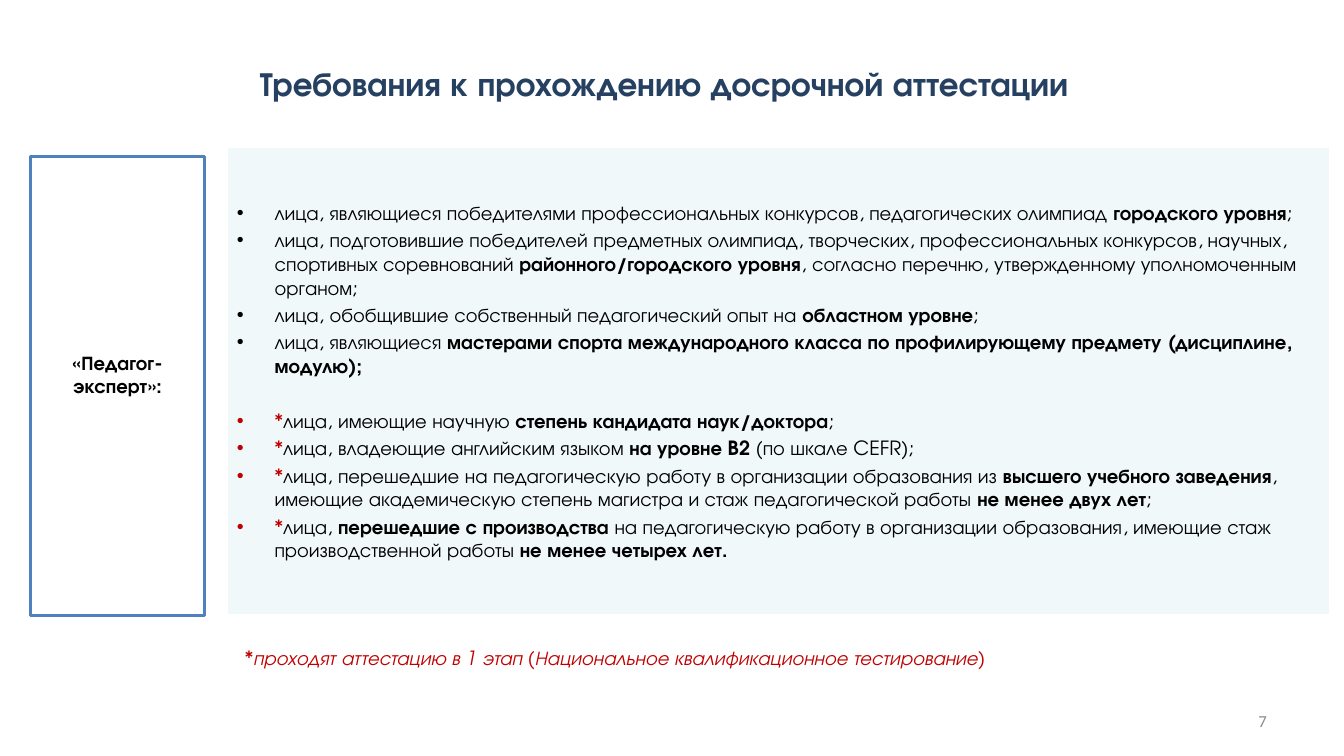
from dataclasses import dataclass

from lxml.etree import SubElement
from pptx import Presentation
from pptx.dml.color import RGBColor
from pptx.enum.shapes import MSO_SHAPE as Preset
from pptx.enum.text import MSO_ANCHOR as Anchor, PP_ALIGN as Align
from pptx.oxml.ns import qn
from pptx.util import Cm, Pt


@dataclass(frozen=True)
class Theme:
    font: str = "TeX Gyre Adventor"
    number_font: str = "Calibri"
    title_size: int = 24
    body_size: int = 14
    number_size: int = 12
    white: str = "FFFFFF"
    black: str = "000000"
    panel: str = "F0F8FA"
    frame: str = "4F81BD"
    title: str = "254061"
    accent: str = "C00000"
    number: str = "8C8C8C"


theme = Theme()

# Bold passages stand between vertical bars.
COMMON_RULES = [
    "лица, являющиеся победителями профессиональных конкурсов, педагогических олимпиад |городского уровня|;",
    "лица, подготовившие победителей предметных олимпиад, творческих, профессиональных конкурсов, научных, "
    "спортивных соревнований |районного/городского уровня|, согласно перечню, утвержденному уполномоченным органом;",
    "лица, обобщившие собственный педагогический опыт на |областном уровне|;",
    "лица, являющиеся |мастерами спорта международного класса по профилирующему предмету (дисциплине, модулю);",
]
STARRED_RULES = [
    "лица, имеющие научную |степень кандидата наук/доктора|;",
    "лица, владеющие английским языком |на уровне B2| (по шкале CEFR);",
    "лица, перешедшие на педагогическую работу в организации образования из |высшего учебного заведения|, "
    "имеющие академическую степень магистра и стаж педагогической работы |не менее двух лет|;",
    "лица, |перешедшие с производства| на педагогическую работу в организации образования, имеющие стаж "
    "производственной работы |не менее четырех лет.",
]


def add_run(paragraph, text, color, size=theme.body_size, name=theme.font, **styles):
    run = paragraph.add_run()
    run.text = text
    run.font.color.rgb = RGBColor.from_string(color)
    for attribute, value in {"size": Pt(size), "name": name, **styles}.items():
        setattr(run.font, attribute, value)


presentation = Presentation()
presentation.slide_width, presentation.slide_height = Cm(33.87), Cm(19.05)
slide = presentation.slides.add_slide(presentation.slide_layouts[6])

# Filled boxes: requirements panel and category label
boxes = []
for left, top, width, height, fill, line in [
    (5.72, 3.7, 27.8, 11.82, theme.panel, theme.white),
    (0.76, 3.94, 4.4, 11.58, theme.white, theme.frame),
]:
    box = slide.shapes.add_shape(Preset.RECTANGLE, Cm(left), Cm(top), Cm(width), Cm(height))
    box.shadow.inherit = False
    box.fill.solid()
    box.fill.fore_color.rgb = RGBColor.from_string(fill)
    box.line.color.rgb = RGBColor.from_string(line)
    box.line.width = Pt(2)
    box.text_frame.word_wrap = True
    box.text_frame.vertical_anchor = Anchor.MIDDLE
    boxes.append(box)
panel, label = boxes

for index, rule in enumerate(COMMON_RULES + STARRED_RULES):
    frame = panel.text_frame
    paragraph = frame.add_paragraph() if index else frame.paragraphs[0]
    paragraph.alignment = Align.LEFT
    starts_group = index == len(COMMON_RULES)
    paragraph.space_before = Pt(22.4 if starts_group else 2.8)
    properties = paragraph._p.get_or_add_pPr()
    properties.set("marL", str(Cm(0.95)))
    properties.set("indent", str(-Cm(0.95)))
    SubElement(properties, qn("a:buFont"), typeface="Arial")
    SubElement(properties, qn("a:buChar"), char="•")
    if index >= len(COMMON_RULES):
        add_run(paragraph, "*", theme.accent)
    for part, text in enumerate(rule.split("|")):
        add_run(paragraph, text, theme.black, bold=part % 2 == 1)

label.text_frame.margin_bottom = Cm(0.72)
paragraph = label.text_frame.paragraphs[0]
paragraph.alignment = Align.CENTER
add_run(paragraph, "«Педагог-эксперт»:", theme.black, bold=True)

# Title, footnote and slide number
for text, bounds, alignment, anchor, styles in [
    ("Требования к прохождению досрочной аттестации", (1.5, 1.6, 30.48, 1),
     Align.CENTER, Anchor.MIDDLE, {"color": theme.title, "size": theme.title_size, "bold": True}),
    ("*проходят аттестацию в 1 этап (Национальное квалификационное тестирование)", (5.92, 16.15, 26.26, 0.86),
     Align.LEFT, Anchor.TOP, {"color": theme.accent, "italic": True}),
    ("7", (24.28, 17.65, 7.9, 1.02),
     Align.RIGHT, Anchor.MIDDLE, {"color": theme.number, "size": theme.number_size, "name": theme.number_font}),
]:
    frame = slide.shapes.add_textbox(*map(Cm, bounds)).text_frame
    frame.word_wrap = True
    frame.vertical_anchor = anchor
    paragraph = frame.paragraphs[0]
    paragraph.alignment = alignment
    add_run(paragraph, text, **styles)

presentation.save("out.pptx")
